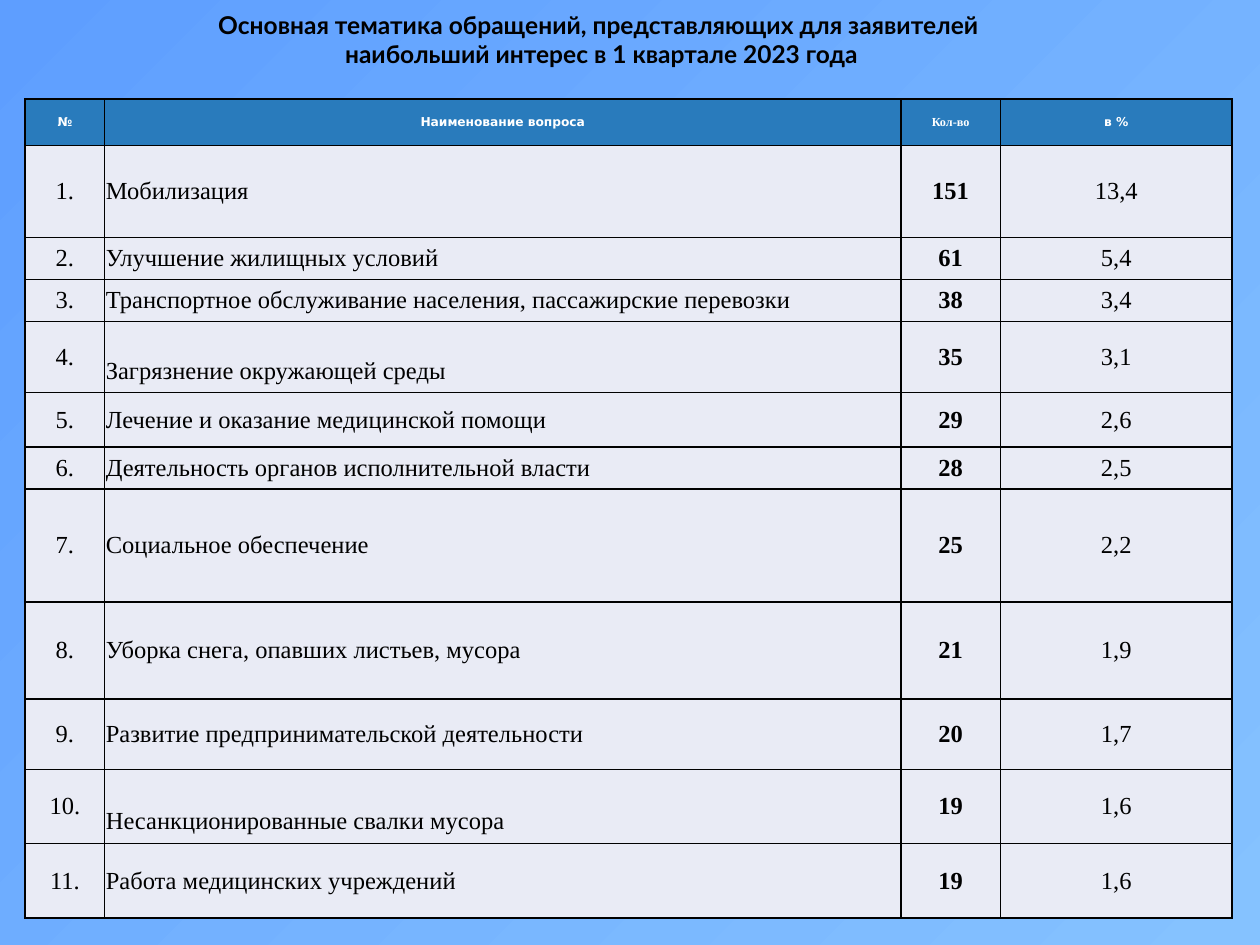
from dataclasses import dataclass

from lxml import etree
from pptx import Presentation
from pptx.dml.color import RGBColor
from pptx.enum.text import MSO_ANCHOR, PP_ALIGN
from pptx.oxml.ns import qn
from pptx.util import Inches, Pt

LEFT, CENTER = PP_ALIGN.LEFT, PP_ALIGN.CENTER
MIDDLE = MSO_ANCHOR.MIDDLE


@dataclass(frozen=True)
class Theme:
    background: tuple = ("5E9EFF", "85C2FF")
    header_fill: str = "297BBC"
    body_fill: str = "E9EBF5"
    header_text: str = "FFFFFF"
    text: str = "000000"
    border: str = "000000"
    border_width: float = 0.96
    title_font: str = "Lato"
    header_font: str = "DejaVu Sans"
    body_font: str = "Times New Roman"
    text_size: int = 14
    header_size: int = 7


THEME = Theme()
SLIDE_WIDTH, SLIDE_HEIGHT = Inches(10), Inches(7.5)

TITLE = ("Основная тематика обращений, представляющих для заявителей \v"
         "наибольший интерес в 1 квартале 2023 года")
HEADINGS = ("№", "Наименование вопроса", "Кол-во", "в %")
TOPICS = (
    ("Мобилизация", "151", "13,4"),
    ("Улучшение жилищных условий", "61", "5,4"),
    ("Транспортное обслуживание населения, пассажирские перевозки", "38", "3,4"),
    ("Загрязнение окружающей среды", "35", "3,1"),
    ("Лечение и оказание медицинской помощи", "29", "2,6"),
    ("Деятельность органов исполнительной власти", "28", "2,5"),
    ("Социальное обеспечение", "25", "2,2"),
    ("Уборка снега, опавших листьев, мусора", "21", "1,9"),
    ("Развитие предпринимательской деятельности", "20", "1,7"),
    ("Несанкционированные свалки мусора", "19", "1,6"),
    ("Работа медицинских учреждений", "19", "1,6"),
)
LOWERED_TOPICS = (4, 10)  # topics set one line lower in their cells
COLUMN_WEIGHTS = (0.63, 6.32, 0.79, 1.84)
ROW_WEIGHTS = (0.37, 0.73, 0.24, 0.24, 0.24, 0.43, 0.31, 0.9, 0.77, 0.56, 0.59, 0.59)


def box(left, top, width, height):
    """Turn shares of the slide into a box in slide units."""
    return (int(left * SLIDE_WIDTH), int(top * SLIDE_HEIGHT),
            int(width * SLIDE_WIDTH), int(height * SLIDE_HEIGHT))


def format_text(frame, font, size, color, bold, align):
    for paragraph in frame.paragraphs:
        paragraph.alignment = align
        for run in paragraph.runs:
            run.font.name = font
            run.font.size = Pt(size)
            run.font.bold = bold
            run.font.color.rgb = RGBColor.from_string(color)


def paint_background(slide):
    fill = slide.background.fill
    fill.gradient()
    fill.gradient_angle = 315
    for stop, color in zip(fill.gradient_stops, THEME.background):
        stop.color.rgb = RGBColor.from_string(color)


def add_title(slide, area):
    frame = slide.shapes.add_textbox(*area).text_frame
    frame.word_wrap = True
    frame.vertical_anchor = MIDDLE
    frame.text = TITLE
    format_text(frame, THEME.title_font, THEME.text_size, THEME.text, True, CENTER)


def add_borders(cell):
    properties = cell._tc.get_or_add_tcPr()
    for side in ("a:lnL", "a:lnR", "a:lnT", "a:lnB"):
        line = etree.SubElement(properties, qn(side), w=str(Pt(THEME.border_width)))
        solid = etree.SubElement(line, qn("a:solidFill"))
        etree.SubElement(solid, qn("a:srgbClr"), val=THEME.border)


def fill_cell(cell, text, fill, font, size, color, bold, align):
    add_borders(cell)
    cell.fill.solid()
    cell.fill.fore_color.rgb = RGBColor.from_string(fill)
    cell.vertical_anchor = MIDDLE
    cell.margin_left = cell.margin_right = Inches(0.01)
    cell.margin_top = cell.margin_bottom = Inches(0.05)
    cell.text_frame.text = text
    format_text(cell.text_frame, font, size, color, bold, align)


def add_topics_table(slide, area):
    width, height = area[2:]
    table = slide.shapes.add_table(len(TOPICS) + 1, len(HEADINGS), *area).table
    for column, weight in zip(table.columns, COLUMN_WEIGHTS):
        column.width = int(width * weight / sum(COLUMN_WEIGHTS))
    for row, weight in zip(table.rows, ROW_WEIGHTS):
        row.height = int(height * weight / sum(ROW_WEIGHTS))

    # Header row
    for index, heading in enumerate(HEADINGS):
        font = THEME.body_font if heading == "Кол-во" else THEME.header_font
        fill_cell(table.cell(0, index), heading, THEME.header_fill, font,
                  THEME.header_size, THEME.header_text, True, CENTER)

    # Topic rows: number, name, bold count, share
    for number, topic in enumerate(TOPICS, start=1):
        for index, value in enumerate((f"{number}.", *topic)):
            fill_cell(table.cell(number, index), value, THEME.body_fill,
                      THEME.body_font, THEME.text_size, THEME.text,
                      index == 2, LEFT if index == 1 else CENTER)
    for number in LOWERED_TOPICS:
        table.cell(number, 1).margin_top = Inches(0.28)


def main():
    presentation = Presentation()
    presentation.slide_width, presentation.slide_height = SLIDE_WIDTH, SLIDE_HEIGHT
    slide = presentation.slides.add_slide(presentation.slide_layouts[6])
    paint_background(slide)
    add_title(slide, box(0.02, 0.005, 0.915, 0.073))
    add_topics_table(slide, box(0.02, 0.105, 0.958, 0.795))
    presentation.save("out.pptx")


if __name__ == "__main__":
    main()
